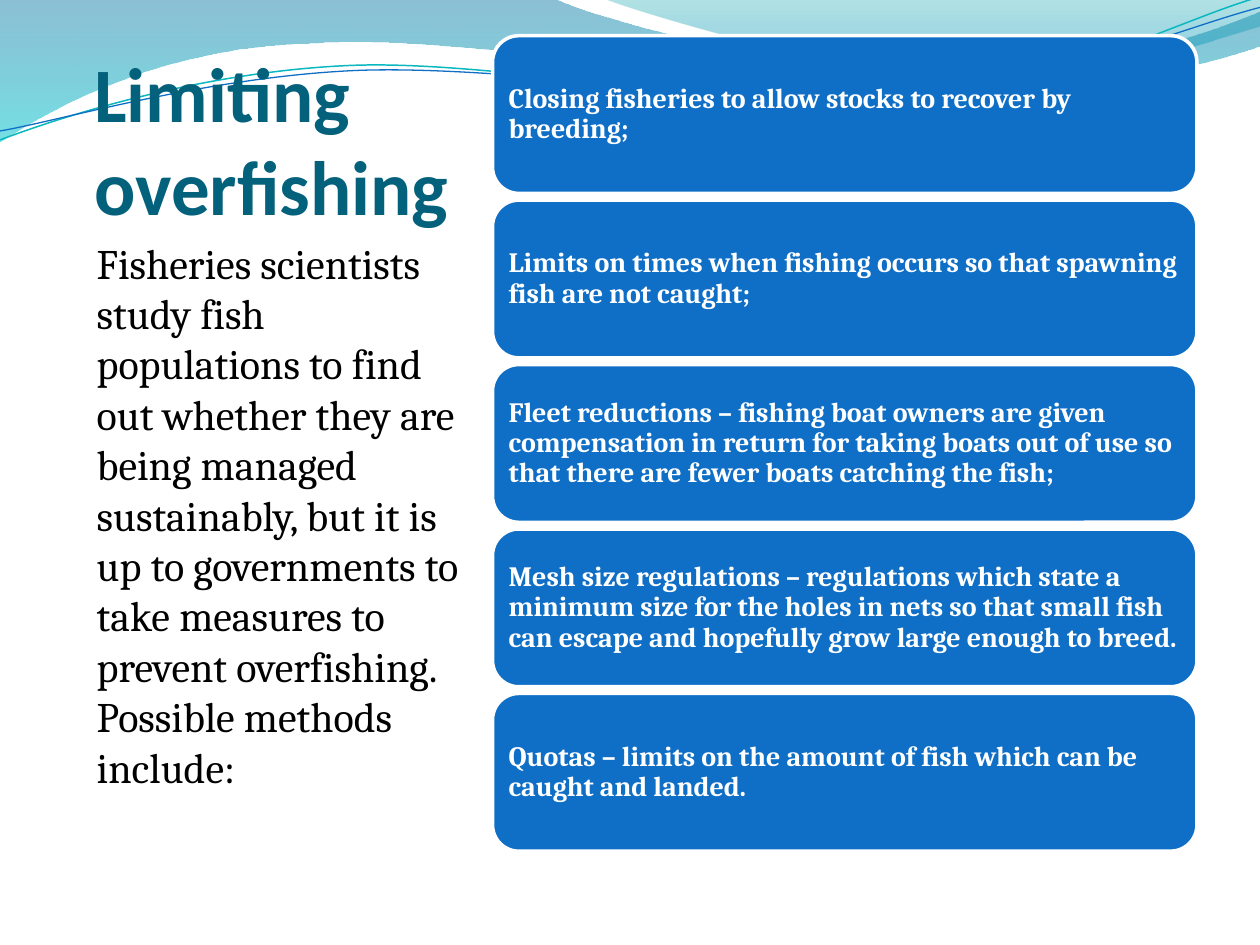
import dataclasses
import math
import typing

import pptx
import pptx.dml.color
import pptx.enum.shapes
import pptx.enum.text
import pptx.oxml
import pptx.oxml.ns
import pptx.util
from pptx.util import Cm

COLORS = {
    "title": "04617B",
    "text": "000000",
    "white": "FFFFFF",
    "blue": "0F6FC6",
    "teal": "0AB8BF",
}
Point = typing.Tuple[float, float]
LINE_ANGLE = -2.7
LINE_CENTER = (12.67, 1.48)


@dataclasses.dataclass
class GradientStop:
    position: float
    color: str
    opacity: int


@dataclasses.dataclass
class Wave:
    """Segments hold one point for a line, three for a Bezier curve (in cm)."""
    start: Point
    segments: typing.List[typing.List[Point]]
    stops: typing.Sequence[GradientStop] = ()
    line_color: str = ""
    line_width: float = 0


WAVES = [
    Wave((0, 0), [
        [(11.18, -0.03)],
        [(12.09, 0.43), (16.87, 1.6), (19.25, 1.6)],
        [(21.67, 1.6), (24.33, 0.66), (25.4, 0.23)],
        [(25.43, 0.91)],
        [(24.97, 1.12), (22.1, 1.93), (18.95, 1.91)],
        [(15.8, 1.91), (9.7, 0.71), (6.53, 0.86)],
        [(3.28, 0.91), (1.17, 2.11), (-0.03, 2.87)],
    ], stops=[GradientStop(0, "0074A1", 45), GradientStop(1, "00C6CF", 55)]),
    Wave((12.17, -0.03), [
        [(12.93, 0.28), (17.32, 1.57), (19.53, 1.65)],
        [(21.74, 1.75), (24.41, 0.81), (25.4, 0.53)],
        [(25.4, 0)],
    ], stops=[GradientStop(0, "00A1A9", 30), GradientStop(0.8, "008BBF", 45)]),
    Wave((0, 2.82), [
        [(1.22, 2.36), (4.01, 1.45), (7.04, 1.32)],
        [(10.03, 1.19), (15.06, 2.26), (18.11, 2.03)],
        [(21.16, 1.8), (23.83, 0.38), (25.35, -0.05)],
    ], line_color=COLORS["teal"], line_width=0.85),
    Wave((0, 2.64), [
        [(1.19, 2.44), (4.17, 1.55), (7.19, 1.42)],
        [(10.24, 1.3), (15.16, 2.13), (18.21, 1.91)],
        [(21.23, 1.7), (23.9, 0.53), (25.4, 0.15)],
    ], line_color=COLORS["blue"], line_width=0.75),
]

METHODS = [
    "Closing fisheries to allow stocks to recover by breeding;",
    "Limits on times when fishing occurs so that spawning fish are not caught;",
    "Fleet reductions – fishing boat owners are given compensation in return for "
    "taking boats out of use so that there are fewer boats catching the fish;",
    "Mesh size regulations – regulations which state a minimum size for the holes in "
    "nets so that small fish can escape and hopefully grow large enough to breed.",
    "Quotas – limits on the amount of fish which can be caught and landed.",
]
INTRODUCTION = (
    "Fisheries scientists study fish populations to find out whether they are being "
    "managed sustainably, but it is up to governments to take measures to prevent "
    "overfishing. Possible methods include:"
)


def rgb(color: str) -> pptx.dml.color.RGBColor:
    return pptx.dml.color.RGBColor.from_string(color)


def xml(markup: str):
    """Make an element from one drawing tag."""
    return pptx.oxml.parse_xml(f'<a:{markup} {pptx.oxml.ns.nsdecls("a")}/>')


def level(point: Point) -> Point:
    """Turn a point back by the angle of the tilted lines."""
    angle = math.radians(-LINE_ANGLE)
    x, y = point[0] - LINE_CENTER[0], point[1] - LINE_CENTER[1]
    return (LINE_CENTER[0] + x * math.cos(angle) - y * math.sin(angle),
            LINE_CENTER[1] + x * math.sin(angle) + y * math.cos(angle))


def bend_segments(shape, segments: typing.List[typing.List[Point]]) -> None:
    """Join the straight steps of each three-point segment into a Bezier curve."""
    steps = iter(list(shape.element.iter(pptx.oxml.ns.qn("a:lnTo"))))
    for segment in segments:
        group = [next(steps) for _ in segment]
        if len(group) == 3:
            curve = xml("cubicBezTo")
            group[0].addprevious(curve)
            for step in group:
                curve.append(step[0])
                step.getparent().remove(step)


def draw_wave(slide, wave: Wave) -> None:
    points = [wave.start] + [point for segment in wave.segments for point in segment]
    if not wave.stops:
        points = [level(point) for point in points]
    vertices = [(Cm(x), Cm(y)) for x, y in points]
    builder = slide.shapes.build_freeform(*vertices[0])
    builder.add_line_segments(vertices[1:], close=bool(wave.stops))
    shape = builder.convert_to_shape()
    bend_segments(shape, wave.segments)
    shape.shadow.inherit = False
    if not wave.stops:
        shape.rotation = LINE_ANGLE
        shape.fill.background()
        shape.line.color.rgb = rgb(wave.line_color)
        shape.line.width = pptx.util.Pt(wave.line_width)
        return
    shape.line.fill.background()
    shape.fill.gradient()
    shape.fill.gradient_angle = 270
    for gradient_stop, stop in zip(shape.fill.gradient_stops, wave.stops):
        gradient_stop.position = stop.position
        gradient_stop.color.rgb = rgb(stop.color)
    color_elements = shape.element.iter(pptx.oxml.ns.qn("a:srgbClr"))
    for color_element, stop in zip(list(color_elements), wave.stops):
        color_element.append(xml(f'alpha val="{stop.opacity * 1000}"'))


def write_text(shape, text: str, font: str, size: float, color: str, bold: bool,
               anchor, margins: typing.Sequence[float]):
    """Fill a shape with one formatted paragraph; margins are left, top, right, bottom."""
    frame = shape.text_frame
    frame.text = text
    frame.word_wrap = True
    frame.auto_size = pptx.enum.text.MSO_AUTO_SIZE.NONE
    frame.vertical_anchor = anchor
    (frame.margin_left, frame.margin_top,
     frame.margin_right, frame.margin_bottom) = map(Cm, margins)
    paragraph = frame.paragraphs[0]
    paragraph.alignment = pptx.enum.text.PP_ALIGN.LEFT
    run_font = paragraph.runs[0].font
    run_font.name, run_font.size, run_font.bold = font, pptx.util.Pt(size), bold
    run_font.color.rgb = rgb(color)
    return paragraph


def place(shape, left: float, top: float, width: float, height: float) -> None:
    shape.left, shape.top, shape.width, shape.height = map(Cm, (left, top, width, height))


def draw_method(slide, index: int, text: str) -> None:
    shape = slide.shapes.add_shape(
        pptx.enum.shapes.MSO_SHAPE.ROUNDED_RECTANGLE,
        Cm(9.93), Cm(0.72 + 3.315 * index), Cm(14.2), Cm(3.18))
    shape.shadow.inherit = False
    shape.fill.solid()
    shape.fill.fore_color.rgb = rgb(COLORS["blue"])
    shape.line.color.rgb = rgb(COLORS["white"])
    shape.line.width = pptx.util.Pt(2)
    paragraph = write_text(shape, text, "Cambria", 16, COLORS["white"], True,
                           pptx.enum.text.MSO_ANCHOR.MIDDLE, [0.17] * 4)
    paragraph.line_spacing = 0.9


def main() -> None:
    presentation = pptx.Presentation()
    presentation.slide_width, presentation.slide_height = Cm(25.4), Cm(19.05)
    slide = presentation.slides.add_slide(presentation.slide_layouts[1])
    title, body = slide.shapes.title, slide.placeholders[1]

    # Background waves, kept behind the placeholders
    for wave in WAVES:
        draw_wave(slide, wave)
    for placeholder in (title, body):
        slide.shapes.element.append(placeholder.element)

    # Title and introduction
    place(title, 1.9, 1.42, 7.62, 3.23)
    write_text(title, "Limiting overfishing", "Calibri", 44, COLORS["title"], True,
               pptx.enum.text.MSO_ANCHOR.BOTTOM, (0, 0.13, 0, 0))
    place(body, 1.9, 4.65, 7.62, 12.7)
    paragraph = write_text(body, INTRODUCTION, "Cambria", 24, COLORS["text"], False,
                           pptx.enum.text.MSO_ANCHOR.TOP, (0.05, 0.13, 0.05, 0.13))
    paragraph.space_before = pptx.util.Pt(4.8)
    properties = next(body.element.iter(pptx.oxml.ns.qn("a:pPr")))
    properties.set("marL", "0")
    properties.set("indent", "0")
    properties.append(xml("buNone"))

    # Methods
    for index, text in enumerate(METHODS):
        draw_method(slide, index, text)

    presentation.save("out.pptx")


if __name__ == "__main__":
    main()
